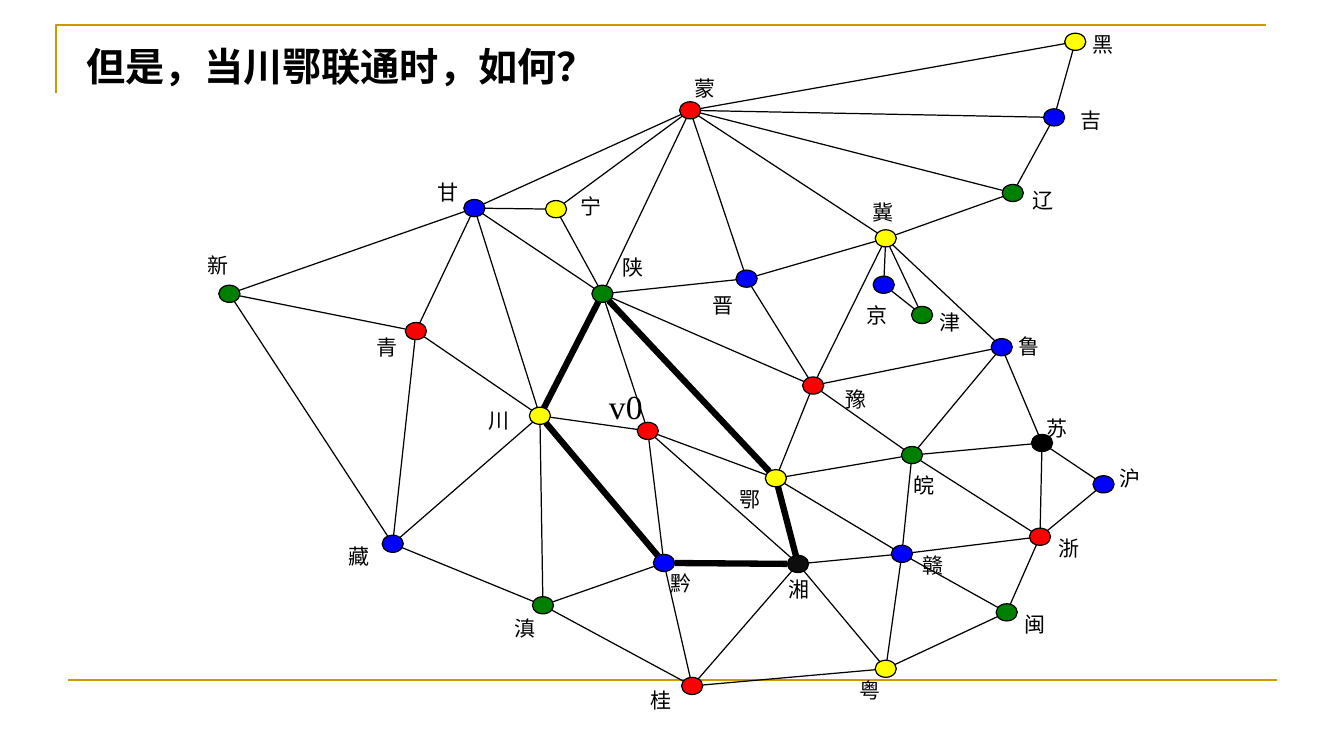
from math import hypot

from lxml.etree import SubElement
from pptx import Presentation
from pptx.dml.color import RGBColor
from pptx.enum.shapes import MSO_CONNECTOR as Connector, MSO_SHAPE as Shape
from pptx.enum.text import MSO_ANCHOR as Anchor, MSO_AUTO_SIZE as AutoSize, PP_ALIGN as Align
from pptx.oxml.ns import qn
from pptx.util import Inches, Pt

COLORS = {
    "red": "FF0000", "blue": "0000FF", "yellow": "FFFF00", "green": "008000",
    "black": "000000", "ink": "0D0D0D", "gold": "CC9900",
}
CJK_FONT = "Noto Sans CJK SC"
NODE_WIDTH, NODE_HEIGHT = 0.21, 0.17
THIN, THICK = 0.88, 4.5

# name: node left, node top, colour, label left, label top
PROVINCES = {
    "黑": (10.56, 0.33, "yellow", 10.84, 0.31),
    "吉": (10.35, 1.08, "blue", 10.72, 1.07),
    "辽": (9.94, 1.83, "green", 10.24, 1.86),
    "蒙": (6.74, 1.01, "red", 6.89, 0.75),
    "冀": (8.68, 2.28, "yellow", 8.65, 1.98),
    "京": (8.66, 2.74, "blue", 8.59, 3.0),
    "津": (9.04, 3.04, "green", 9.32, 3.07),
    "晋": (7.3, 2.68, "blue", 7.07, 2.9),
    "鲁": (9.83, 3.36, "blue", 10.1, 3.31),
    "豫": (7.96, 3.74, "red", 8.39, 3.83),
    "甘": (4.6, 1.98, "blue", 4.34, 1.78),
    "宁": (5.41, 1.99, "yellow", 5.76, 1.92),
    "陕": (5.87, 2.83, "green", 6.17, 2.52),
    "新": (2.17, 2.83, "green", 2.06, 2.51),
    "青": (4.02, 3.2, "red", 3.73, 3.32),
    "藏": (3.79, 5.31, "blue", 3.46, 5.39),
    "川": (5.25, 4.04, "yellow", 4.85, 4.04),
    "v0": (6.32, 4.19, "red", 6.04, 3.83),
    "鄂": (7.59, 4.66, "yellow", 7.33, 4.83),
    "皖": (8.94, 4.43, "green", 9.06, 4.69),
    "苏": (10.23, 4.31, "black", 10.38, 4.12),
    "沪": (10.84, 4.72, "blue", 11.1, 4.62),
    "浙": (10.21, 5.24, "red", 10.5, 5.31),
    "赣": (8.84, 5.41, "blue", 9.15, 5.48),
    "闽": (9.88, 5.99, "green", 10.16, 6.07),
    "粤": (8.68, 6.55, "yellow", 8.53, 6.72),
    "湘": (7.81, 5.51, "ink", 7.82, 5.72),
    "黔": (6.48, 5.5, "blue", 6.65, 5.66),
    "滇": (5.28, 5.92, "green", 5.1, 6.11),
    "桂": (6.76, 6.72, "red", 6.45, 6.82),
}
NEIGHBOURS = {
    "蒙": "黑 吉 辽 冀 晋 陕 宁 甘",
    "吉": "黑 辽",
    "冀": "辽 京 津 鲁 晋 豫",
    "京": "津",
    "鲁": "豫 皖 苏",
    "晋": "陕 豫",
    "甘": "新 宁 青 川 陕",
    "青": "新 藏 川",
    "藏": "新 川 滇",
    "陕": "宁 豫 v0",
    "v0": "川 鄂 黔 湘",
    "鄂": "豫 皖 赣",
    "皖": "豫 苏 赣 浙",
    "苏": "沪 浙",
    "浙": "沪 赣 闽",
    "滇": "川 黔 桂",
    "桂": "黔 湘 粤",
    "湘": "赣 粤",
    "赣": "闽 粤",
    "粤": "闽",
}
RING = ["陕", "川", "黔", "湘", "鄂"]


def color(name):
    return RGBColor.from_string(COLORS[name])


def style_line(line, name, width):
    line.color.rgb = color(name)
    line.width = Pt(width)


def style_text(paragraph, size, font_name, bold=False):
    font = paragraph.font
    font.size, font.name, font.bold = Pt(size), font_name, bold
    font.color.rgb = color("black")
    defaults = paragraph._p.pPr.find(qn("a:defRPr"))
    SubElement(defaults, qn("a:ea")).set("typeface", CJK_FONT)


def add_title(slide, text):
    title = slide.shapes.title
    title.left, title.top = Inches(0.76), Inches(0.37)
    title.width, title.height = Inches(5.33), Inches(0.57)
    frame = title.text_frame
    frame.text = text
    frame.word_wrap = False
    frame.auto_size = AutoSize.NONE
    frame.vertical_anchor = Anchor.MIDDLE
    paragraph = frame.paragraphs[0]
    paragraph.alignment = Align.LEFT
    style_text(paragraph, 28, "Arial", bold=True)


def add_line(slide, start, end, name="black", width=THIN):
    points = [Inches(value) for value in (*start, *end)]
    connector = slide.shapes.add_connector(Connector.STRAIGHT, *points)
    style_line(connector.line, name, width)
    SubElement(connector._element.spPr, qn("a:effectLst"))


def add_frame(slide):
    builder = slide.shapes.build_freeform(Inches(0.56), Inches(0.92))
    corners = [(0.56, 0.25), (12.56, 0.25)]
    builder.add_line_segments([(Inches(x), Inches(y)) for x, y in corners], close=False)
    corner = builder.convert_to_shape()
    corner.shadow.inherit = False
    corner.fill.background()
    style_line(corner.line, "gold", 1.5)
    add_line(slide, (0.67, 6.75), (12.67, 6.75), "gold", 1.5)


def add_node(slide, left, top, name):
    node = slide.shapes.add_shape(
        Shape.OVAL, Inches(left), Inches(top), Inches(NODE_WIDTH), Inches(NODE_HEIGHT))
    node.shadow.inherit = False
    node.fill.solid()
    node.fill.fore_color.rgb = color(name)
    style_line(node.line, "black", THIN)


def add_label(slide, text, left, top):
    is_vertex = text == "v0"
    width, height = (0.34, 0.4) if is_vertex else (0.21, 0.25)
    box = slide.shapes.add_textbox(Inches(left), Inches(top), Inches(width), Inches(height))
    frame = box.text_frame
    frame.margin_left = frame.margin_right = frame.margin_top = frame.margin_bottom = 0
    frame.word_wrap = False
    frame.text = text
    if is_vertex:
        style_text(frame.paragraphs[0], 24, "Times New Roman")
    else:
        style_text(frame.paragraphs[0], 15, CJK_FONT)


def add_edge(slide, first, second, width=THIN):
    (x1, y1), (x2, y2) = [
        (PROVINCES[name][0] + NODE_WIDTH / 2, PROVINCES[name][1] + NODE_HEIGHT / 2)
        for name in (first, second)]
    dx, dy = x2 - x1, y2 - y1
    rim = 1 / hypot(dx / (NODE_WIDTH / 2), dy / (NODE_HEIGHT / 2))
    add_line(slide, (x1 + dx * rim, y1 + dy * rim), (x2 - dx * rim, y2 - dy * rim), width=width)


def main():
    presentation = Presentation()
    presentation.slide_width, presentation.slide_height = Inches(13.33), Inches(7.5)
    slide = presentation.slides.add_slide(presentation.slide_layouts[5])
    add_title(slide, "但是，当川鄂联通时，如何？")
    add_frame(slide)
    for name, (left, top, fill, label_left, label_top) in PROVINCES.items():
        add_node(slide, left, top, fill)
        add_label(slide, name, label_left, label_top)
    for first, others in NEIGHBOURS.items():
        for second in others.split():
            add_edge(slide, first, second)
    for first, second in zip(RING, RING[1:] + RING[:1]):
        add_edge(slide, first, second, THICK)
    presentation.save("out.pptx")


if __name__ == "__main__":
    main()
